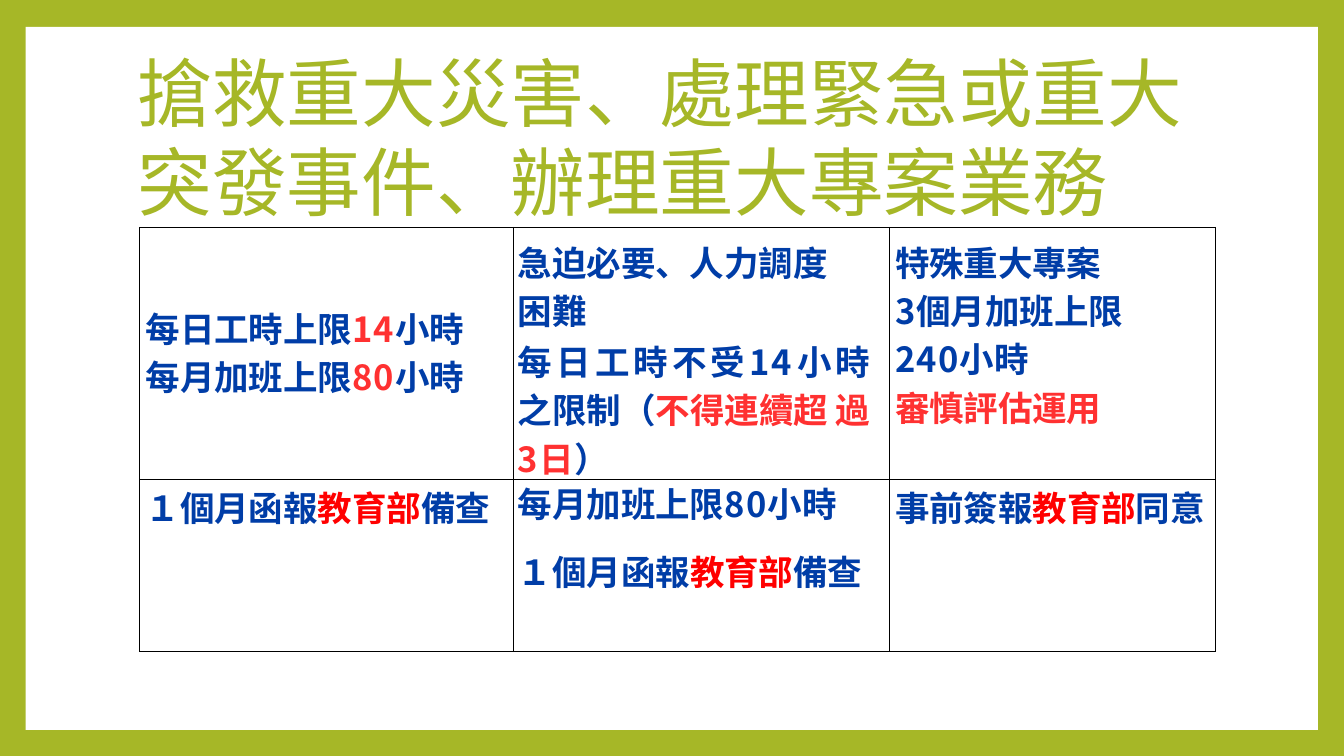
from dataclasses import dataclass
from itertools import groupby

import pptx
import pptx.dml.color
import pptx.enum.shapes
import pptx.enum.text
import pptx.oxml
import pptx.oxml.ns
import pptx.slide
import pptx.table
import pptx.text.text
import pptx.util
from pptx.util import Cm

FONT = "Noto Sans CJK SC"
GREEN = "A6B727"
WHITE = "FFFFFF"
BLACK = "000000"
BLUE = "003DA7"
CORAL = "FF3131"
RED = "FF0000"
FIRST_LINE = 37
LINE_PITCH = 51.8


@dataclass(frozen=True)
class Segment:
    text: str
    color: str = BLUE


@dataclass(frozen=True)
class Line:
    segments: tuple[Segment, ...]
    space_before: float = 0
    pitch: float = LINE_PITCH
    justified: bool = False


@dataclass(frozen=True)
class Column:
    left: float
    top: float
    width: float
    height: float
    lines: tuple[Line, ...]


def plain(text: str, color: str = BLUE) -> Line:
    return Line((Segment(text, color),))


def ministry(before: str, after: str, space_before: float) -> Line:
    return Line((Segment(before), Segment("教育部", RED), Segment(after)), space_before)


def capped(before: str, hours: str) -> Line:
    return Line((Segment(before), Segment(hours, CORAL), Segment("小時")))


COLUMNS = (
    Column(5.51, 11.91, 13.13, 8.13, (
        capped("每日工時上限", "14"),
        capped("每月加班上限", "80"),
        ministry("１個月函報", "備查", 88.6),
    )),
    Column(19.58, 9.4, 13.31, 13.16, (
        plain("急迫必要、人力調度"),
        plain("困難"),
        Line((
            Segment("每日工時不受14小時 之限制（"),
            Segment("不得連續超 過3日", CORAL),
            Segment("）"),
        ), 2.9, justified=True),
        Line((Segment("每月加班上限80小時"),), pitch=48.7),
        ministry("１個月函報", "備查", 21.1),
    )),
    Column(33.83, 9.4, 12.88, 10.59, (
        plain("特殊重大專案"),
        plain("3個月加班上限"),
        plain("240小時"),
        plain("審慎評估運用", CORAL),
        ministry("事前簽報", "同意", 55.4),
    )),
)


def rgb(value: str) -> pptx.dml.color.RGBColor:
    return pptx.dml.color.RGBColor.from_string(value)


def is_number(character: str) -> bool:
    return character.isascii() and character.isdigit()


def set_font(paragraph: pptx.text.text._Paragraph, size: float, bold: bool) -> None:
    paragraph.font.name = FONT
    paragraph.font.size = pptx.util.Pt(size)
    paragraph.font.bold = bold
    properties = paragraph.font._element
    east_asian = pptx.oxml.parse_xml(
        f'<a:ea {pptx.oxml.ns.nsdecls("a")} typeface="{FONT}"/>'
    )
    properties.find(pptx.oxml.ns.qn("a:latin")).addnext(east_asian)


def add_segment(paragraph: pptx.text.text._Paragraph, segment: Segment) -> None:
    for number, characters in groupby(segment.text, is_number):
        run = paragraph.add_run()
        run.text = "".join(characters)
        run.font.color.rgb = rgb(segment.color)
        run.font._element.set("spc", "140" if number else "-10")


def add_text_frame(
    slide: pptx.slide.Slide, left: float, top: float, width: float, height: float
) -> pptx.text.text.TextFrame:
    frame = slide.shapes.add_textbox(Cm(left), Cm(top), Cm(width), Cm(height)).text_frame
    frame.word_wrap = True
    frame.margin_left = frame.margin_right = frame.margin_top = frame.margin_bottom = 0
    return frame


def add_title(slide: pptx.slide.Slide, text: str) -> None:
    frame = add_text_frame(slide, 5.21, 1.7, 41.9, 6.88)
    frame.vertical_anchor = pptx.enum.text.MSO_ANCHOR.MIDDLE
    paragraph = frame.paragraphs[0]
    paragraph.line_spacing = pptx.util.Pt(96)
    set_font(paragraph, 80, False)
    add_segment(paragraph, Segment(text, GREEN))


def add_column(slide: pptx.slide.Slide, column: Column) -> None:
    frame = add_text_frame(slide, column.left, column.top, column.width, column.height)
    for index, line in enumerate(column.lines):
        paragraph = frame.add_paragraph() if index else frame.paragraphs[0]
        paragraph.line_spacing = pptx.util.Pt(line.pitch if index else FIRST_LINE)
        paragraph.space_before = pptx.util.Pt(line.space_before)
        if line.justified:
            paragraph.alignment = pptx.enum.text.PP_ALIGN.JUSTIFY
        set_font(paragraph, 37, True)
        for segment in line.segments:
            add_segment(paragraph, segment)


def style_cell(cell: pptx.table._Cell) -> None:
    properties = cell._tc.get_or_add_tcPr()
    for side in ("lnL", "lnR", "lnT", "lnB"):
        properties.append(pptx.oxml.parse_xml(
            f'<a:{side} {pptx.oxml.ns.nsdecls("a")} w="12700"><a:solidFill>'
            f'<a:srgbClr val="{BLACK}"/></a:solidFill></a:{side}>'
        ))
    cell.fill.background()


def add_grid(slide: pptx.slide.Slide, widths: tuple[float, ...], heights: tuple[float, ...]) -> None:
    table = slide.shapes.add_table(
        len(heights), len(widths), Cm(5.28), Cm(8.59), Cm(sum(widths)), Cm(sum(heights))
    ).table
    table.first_row = table.horz_banding = False
    for column, width in zip(table.columns, widths):
        column.width = Cm(width)
    for row, height in zip(table.rows, heights):
        row.height = Cm(height)
    for cell in table.iter_cells():
        style_cell(cell)


def add_panel(slide: pptx.slide.Slide) -> None:
    shape = slide.shapes.add_shape(
        pptx.enum.shapes.MSO_SHAPE.RECTANGLE, Cm(0.97), Cm(1.02), Cm(48.84), Cm(26.57)
    )
    shape.shadow.inherit = False
    shape.fill.solid()
    shape.fill.fore_color.rgb = rgb(WHITE)
    shape.line.fill.background()


def main() -> None:
    presentation = pptx.Presentation()
    presentation.slide_width = Cm(50.8)
    presentation.slide_height = Cm(28.58)
    slide = presentation.slides.add_slide(presentation.slide_layouts[6])
    slide.background.fill.solid()
    slide.background.fill.fore_color.rgb = rgb(GREEN)
    add_panel(slide)
    add_title(slide, "搶救重大災害、處理緊急或重大突發事件、辦理重大專案業務")
    add_grid(slide, (14.12, 14.22, 12.32), (9.53, 6.5))
    for column in COLUMNS:
        add_column(slide, column)
    presentation.save("out.pptx")


if __name__ == "__main__":
    main()
